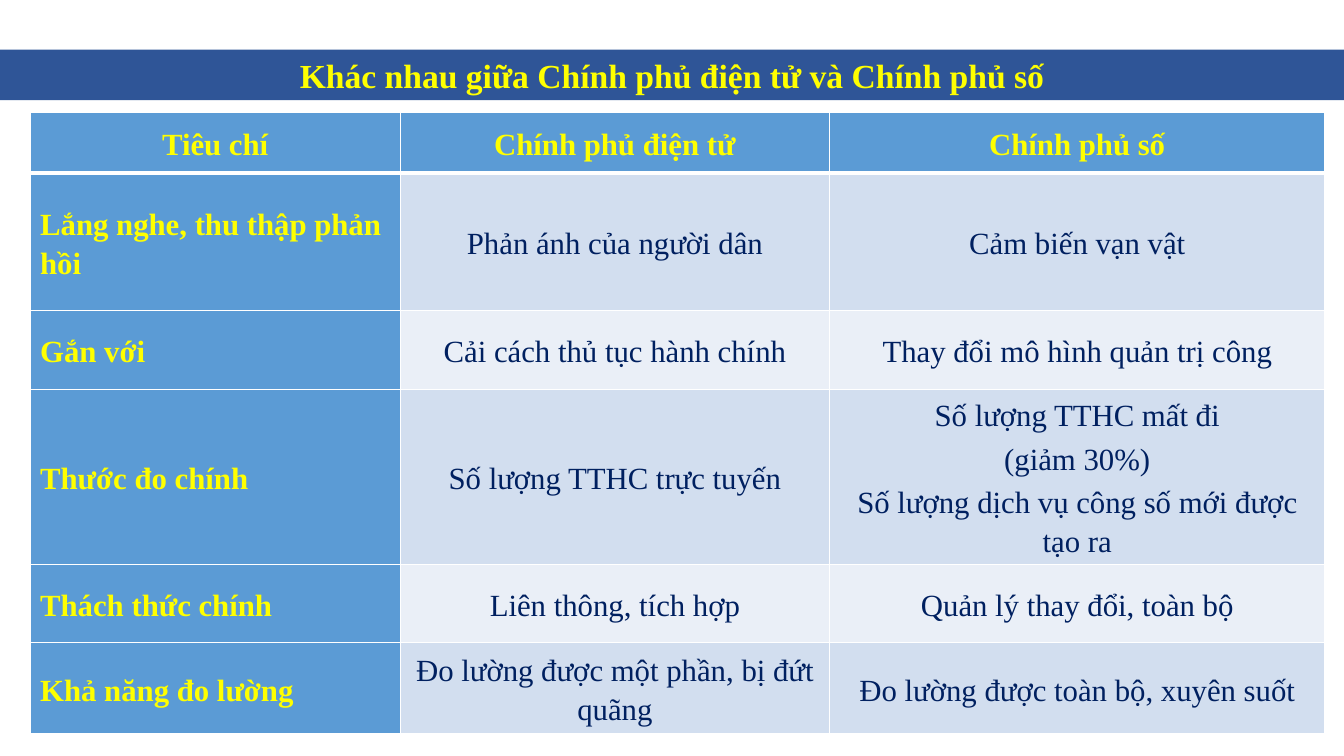
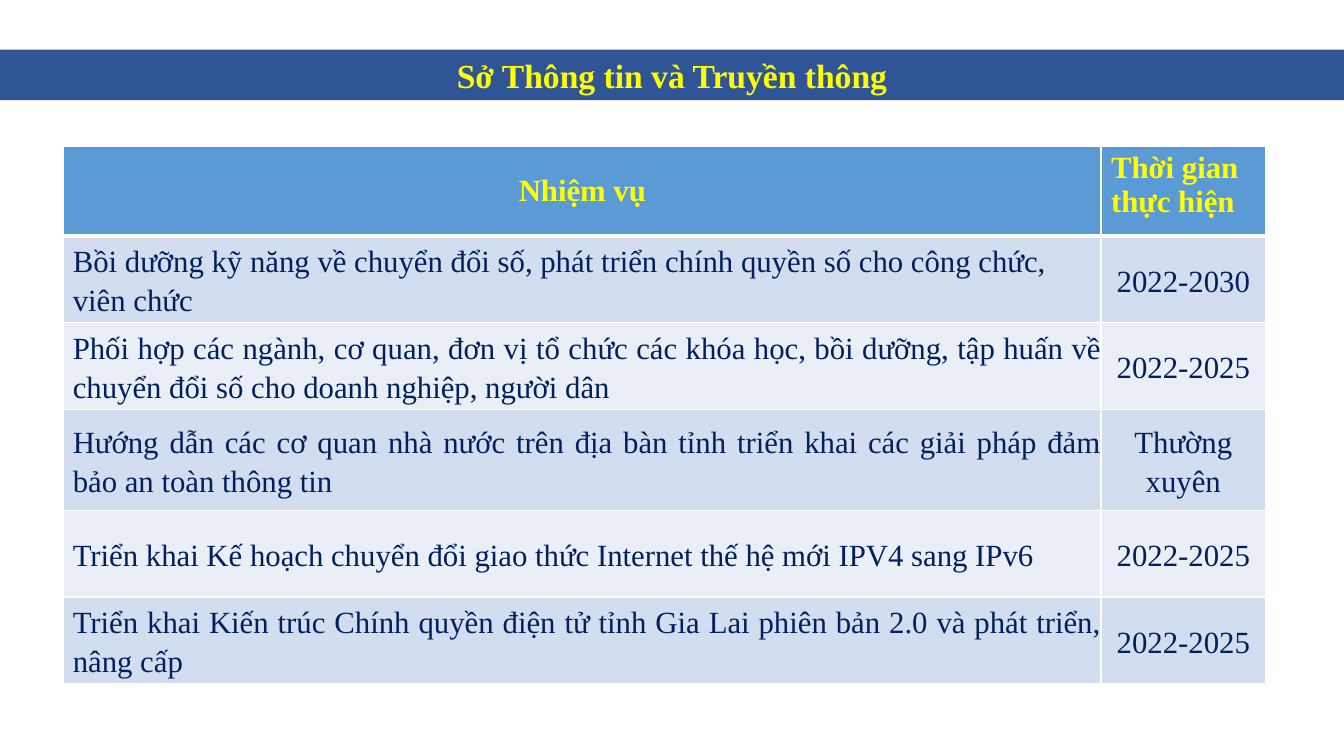
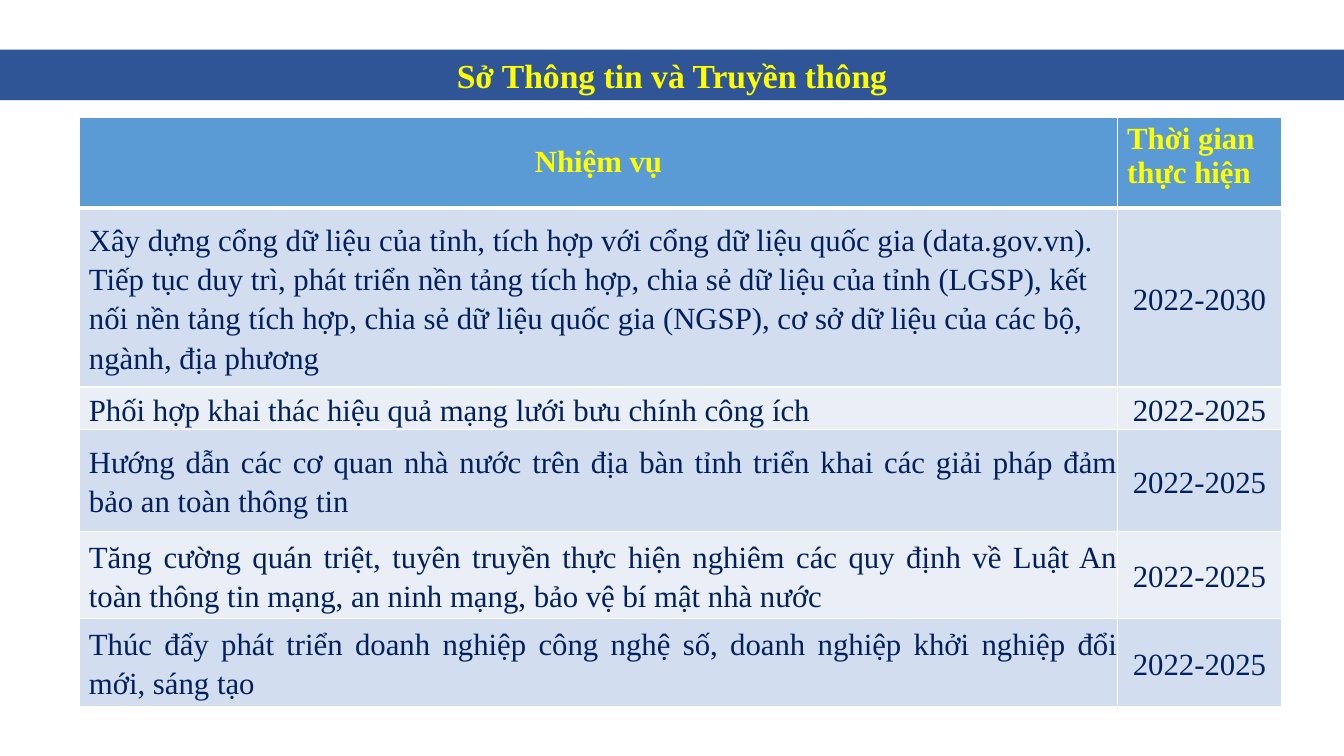
"""Build three slides on digital government, each a title band and a table."""
import pptx
import pptx.dml.color
import pptx.enum.text
import pptx.oxml
import pptx.oxml.ns
import pptx.util

Pt = pptx.util.Pt
RGB = pptx.dml.color.RGBColor
Align = pptx.enum.text.PP_ALIGN
Anchor = pptx.enum.text.MSO_ANCHOR

FONT = "Times New Roman"
BAND = RGB(0x2F, 0x55, 0x97)
HEAD = RGB(0x5B, 0x9B, 0xD5)
STRIPES = (RGB(0xD2, 0xDE, 0xEF), RGB(0xEA, 0xEF, 0xF7))
YELLOW = RGB(0xFF, 0xFF, 0x00)
GOLD = RGB(0xFF, 0xC0, 0x00)
NAVY = RGB(0x00, 0x20, 0x60)
WHITE = RGB(0xFF, 0xFF, 0xFF)

DEPT = "Sở Thông tin và Truyền thông"
TASK_COLS = (741, 117.5)
TASK_HEAD = ("Nhiệm vụ", "Thời gian thực hiện")
SAFETY = ("Hướng dẫn các cơ quan nhà nước trên địa bàn tỉnh triển khai "
          "các giải pháp đảm bảo an toàn thông tin")

CRITERIA = (
    ("Tiêu chí", "Chính phủ điện tử", "Chính phủ số"),
    ("Lắng nghe, thu thập phản hồi", "Phản ánh của người dân", "Cảm biến vạn vật"),
    ("Gắn với", "Cải cách thủ tục hành chính", "Thay đổi mô hình quản trị công"),
    ("Thước đo chính", "Số lượng TTHC trực tuyến",
     "Số lượng TTHC mất đi\n(giảm 30%)\nSố lượng dịch vụ công số mới được tạo ra"),
    ("Thách thức chính", "Liên thông, tích hợp", "Quản lý thay đổi, toàn bộ"),
    ("Khả năng đo lường", "Đo lường được một phần, bị đứt quãng",
     "Đo lường được toàn bộ, xuyên suốt"),
)
SKILLS = (
    TASK_HEAD,
    ("Bồi dưỡng kỹ năng về chuyển đổi số, phát triển chính quyền số cho công chức, "
     "viên chức", "2022-2030"),
    ("Phối hợp các ngành, cơ quan, đơn vị tổ chức các khóa học, bồi dưỡng, tập huấn "
     "về chuyển đổi số cho doanh nghiệp, người dân", "2022-2025"),
    (SAFETY, "Thường xuyên"),
    ("Triển khai Kế hoạch chuyển đổi giao thức Internet thế hệ mới IPV4 sang IPv6",
     "2022-2025"),
    ("Triển khai Kiến trúc Chính quyền điện tử tỉnh Gia Lai phiên bản 2.0 và phát "
     "triển, nâng cấp", "2022-2025"),
)
DATA = (
    TASK_HEAD,
    ("Xây dựng cổng dữ liệu của tỉnh, tích hợp với cổng dữ liệu quốc gia "
     "(data.gov.vn). Tiếp tục duy trì, phát triển nền tảng tích hợp, chia sẻ dữ liệu "
     "của tỉnh (LGSP), kết nối nền tảng tích hợp, chia sẻ dữ liệu quốc gia (NGSP), "
     "cơ sở dữ liệu của các bộ, ngành, địa phương", "2022-2030"),
    ("Phối hợp khai thác hiệu quả mạng lưới bưu chính công ích", "2022-2025"),
    (SAFETY, "2022-2025"),
    ("Tăng cường quán triệt, tuyên truyền thực hiện nghiêm các quy định về Luật An "
     "toàn thông tin mạng, an ninh mạng, bảo vệ bí mật nhà nước", "2022-2025"),
    ("Thúc đẩy phát triển doanh nghiệp công nghệ số, doanh nghiệp khởi nghiệp đổi "
     "mới, sáng tạo", "2022-2025"),
)


def line(tag, color, width):
    """Return a solid line element of the given tag."""
    return pptx.oxml.parse_xml(
        f'<a:{tag} {pptx.oxml.ns.nsdecls("a")} w="{Pt(width)}"><a:solidFill>'
        f'<a:srgbClr val="{color}"/></a:solidFill></a:{tag}>')


def style(frame, size, color, bold, align):
    """Format every paragraph and run of a text frame."""
    for para in frame.paragraphs:
        para.alignment = align
        for run in para.runs:
            run.font.name = FONT
            run.font.size = Pt(size)
            run.font.bold = bold
            run.font.color.rgb = color


def add_slide(deck, text):
    """Add a title-only slide whose title is a full-width band."""
    slide = deck.slides.add_slide(deck.slide_layouts[5])
    title = slide.shapes.title
    title.left, title.top = Pt(0), Pt(35.5)
    title.width, title.height = deck.slide_width, Pt(36)
    title.fill.solid()
    title.fill.fore_color.rgb = BAND
    frame = title.text_frame
    frame.text = text
    frame.word_wrap = True
    frame.auto_size = pptx.enum.text.MSO_AUTO_SIZE.NONE
    frame.vertical_anchor = Anchor.MIDDLE
    style(frame, 24, YELLOW, True, Align.CENTER)
    font = frame.paragraphs[0].runs[0].font
    font._element.insert(0, line("ln", GOLD, 1))
    return slide


def set_cell(cell, text, fill, strong, align, row):
    """Fill, border and label one table cell."""
    props = cell._tc.get_or_add_tcPr()
    widths = {"lnL": 1, "lnR": 1, "lnT": 3 if row == 1 else 1, "lnB": 1 if row else 3}
    for tag, width in widths.items():
        props.append(line(tag, WHITE, width))
    cell.fill.solid()
    cell.fill.fore_color.rgb = fill
    cell.vertical_anchor = Anchor.MIDDLE
    cell.text_frame.text = text
    style(cell.text_frame, 22, YELLOW if strong else NAVY, strong, align)


def space(cell):
    """Open up the lines of a cell."""
    for para in cell.text_frame.paragraphs:
        para.line_spacing = 1.15
        para.space_after = Pt(3)


def add_grid(slide, left, top, cols, rows, texts):
    """Add a sized table and yield each cell with its place, text and row fill."""
    table = slide.shapes.add_table(len(rows), len(cols), Pt(left), Pt(top),
                                   Pt(sum(cols)), Pt(sum(rows))).table
    for col, width in zip(table.columns, cols):
        col.width = Pt(width)
    for row, height in zip(table.rows, rows):
        row.height = Pt(height)
    for r, words in enumerate(texts):
        fill = STRIPES[(r - 1) % 2] if r else HEAD
        for c, text in enumerate(words):
            yield table.cell(r, c), r, c, text, fill


def add_matrix(slide, left, top, cols, rows, texts):
    """Add a table with a strong first row and first column."""
    for cell, r, c, text, fill in add_grid(slide, left, top, cols, rows, texts):
        strong = r == 0 or c == 0
        align = Align.LEFT if r and c == 0 else Align.CENTER
        set_cell(cell, text, HEAD if strong else fill, strong, align, r)
        space(cell)


def add_tasks(slide, left, top, rows, texts):
    """Add a table of tasks and their years."""
    for cell, r, c, text, fill in add_grid(slide, left, top, TASK_COLS, rows, texts):
        if r == 0:
            align = Align.LEFT if c else Align.CENTER
        elif c:
            align = Align.CENTER
        else:
            align = Align.LEFT if r == 1 else Align.JUSTIFY
        set_cell(cell, text, fill, r == 0, align, r)
        if r:
            space(cell)
            cell.margin_left = Pt(0 if c else 6.5)
            cell.margin_right = cell.margin_top = cell.margin_bottom = Pt(0)
        elif c:
            cell.vertical_anchor = Anchor.TOP


def main():
    """Build and save the deck."""
    deck = pptx.Presentation()
    deck.slide_width, deck.slide_height = Pt(960), Pt(540)
    slide = add_slide(deck, "Khác nhau giữa Chính phủ điện tử và Chính phủ số")
    add_matrix(slide, 21.5, 80.5, (264.5, 306.5, 354),
               (43, 98.5, 56, 101.5, 56, 65), CRITERIA)
    add_tasks(add_slide(deck, DEPT), 45.5, 104.5, (64, 62, 62, 72, 62, 62), SKILLS)
    add_tasks(add_slide(deck, DEPT), 57, 83.5, (65, 128, 30.5, 72.5, 62.5, 62.5), DATA)
    deck.save("out.pptx")


if __name__ == "__main__":
    main()
